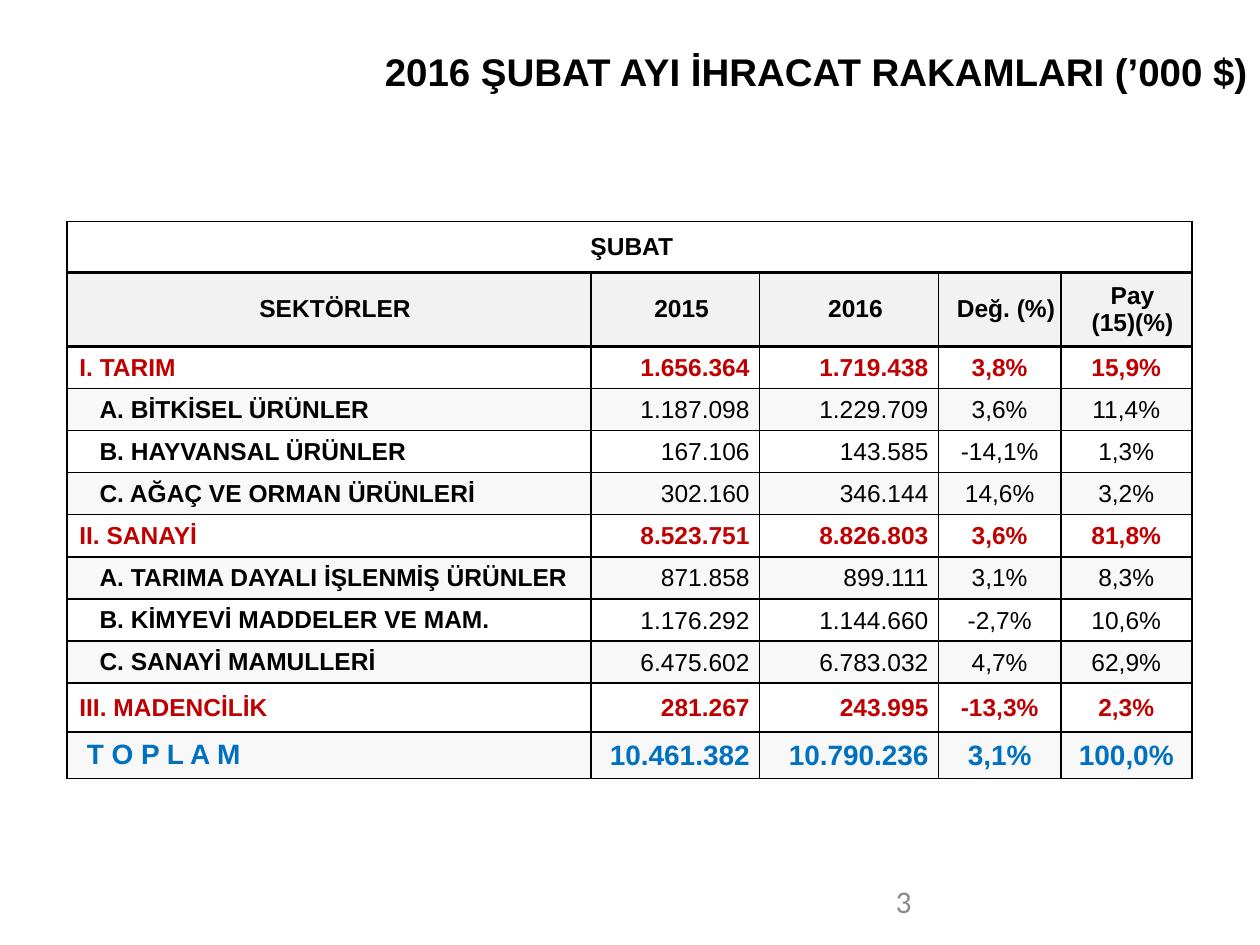
import pptx
import pptx.util
import pptx.dml.color
import pptx.enum.text
import pptx.oxml
import pptx.oxml.ns

Inch = pptx.util.Inches
Align = pptx.enum.text.PP_ALIGN
Mid = pptx.enum.text.MSO_ANCHOR.MIDDLE

theme = {
    "font": "Arial", "page font": "Calibri",
    "title": 22, "page": 18, "body": 14, "total": 16,
    "ink": "000000", "main": "C00000", "sum": "0070C0", "grey": "8C8C8C",
    "head": "F2F2F2", "band": "F8F8F8", "plain": "FFFFFF",
    "thin": 1, "thick": 2,
}
wide, high = 10, 7.5


def write(frame, text, size="body", color="ink", bold=True, font="font",
          align=Align.LEFT):
    for num, line in enumerate(text.split("\n")):
        para = frame.add_paragraph() if num else frame.paragraphs[0]
        para.alignment = align
        run = para.add_run()
        run.text = line
        run.font.name = theme[font]
        run.font.size = pptx.util.Pt(theme[size])
        run.font.bold = bold
        run.font.color.rgb = pptx.dml.color.RGBColor.from_string(theme[color])


def style(cell, fill, top, base, pad):
    """Set fill, insets (left, top, right, bottom) and the four borders."""
    cell.fill.solid()
    cell.fill.fore_color.rgb = pptx.dml.color.RGBColor.from_string(theme[fill])
    cell.vertical_anchor = Mid
    (cell.margin_left, cell.margin_top,
     cell.margin_right, cell.margin_bottom) = map(Inch, pad)
    props = cell._tc.get_or_add_tcPr()
    edges = {"L": "thin", "R": "thin", "T": top, "B": base}
    for spot, (side, width) in enumerate(edges.items()):
        props.insert(spot, pptx.oxml.parse_xml(
            f'<a:ln{side} {pptx.oxml.ns.nsdecls("a")} '
            f'w="{pptx.util.Pt(theme[width])}"><a:solidFill>'
            f'<a:srgbClr val="{theme["ink"]}"/></a:solidFill></a:ln{side}>'))


deck = pptx.Presentation()
deck.slide_width, deck.slide_height = Inch(wide), Inch(high)
slide = deck.slides.add_slide(deck.slide_layouts[6])

page = slide.shapes.add_textbox(Inch(7.01), Inch(6.95), Inch(2.1), Inch(0.4))
page.text_frame.word_wrap = True
page.text_frame.vertical_anchor = Mid
write(page.text_frame, "3", size="page", color="grey", bold=False,
      font="page font")

title = slide.shapes.add_textbox(Inch(1.06), Inch(0.33), Inch(8.94), Inch(0.47))
title.text_frame.word_wrap = True
write(title.text_frame, "2016 ŞUBAT AYI İHRACAT RAKAMLARI (’000 $)",
      size="title", align=Align.RIGHT)

heads = ["SEKTÖRLER", "2015", "2016", "Değ. (%)", "Pay\n(15)(%)"]
# Each row: kind, then the text of its cells
rows = [
    ("main", "I. TARIM", "1.656.364", "1.719.438", "3,8%", "15,9%"),
    ("part", "A. BİTKİSEL ÜRÜNLER", "1.187.098", "1.229.709", "3,6%", "11,4%"),
    ("part", "B. HAYVANSAL ÜRÜNLER", "167.106", "143.585", "-14,1%", "1,3%"),
    ("part", "C. AĞAÇ VE ORMAN ÜRÜNLERİ", "302.160", "346.144", "14,6%", "3,2%"),
    ("main", "II. SANAYİ", "8.523.751", "8.826.803", "3,6%", "81,8%"),
    ("part", "A. TARIMA DAYALI İŞLENMİŞ ÜRÜNLER", "871.858", "899.111", "3,1%", "8,3%"),
    ("part", "B. KİMYEVİ MADDELER VE MAM.", "1.176.292", "1.144.660", "-2,7%", "10,6%"),
    ("part", "C. SANAYİ MAMULLERİ", "6.475.602", "6.783.032", "4,7%", "62,9%"),
    ("main", "III. MADENCİLİK", "281.267", "243.995", "-13,3%", "2,3%"),
    ("sum", "T O P L A M", "10.461.382", "10.790.236", "3,1%", "100,0%"),
]
cols = [4.16, 1.34, 1.42, 0.97, 1.04]
tall = [0.4, 0.59] + [1 / 3] * 8 + [0.39, 0.36]
dent = {"main": 0.1, "part": 0.26, "sum": 0.16}
sides = [Align.LEFT] + [Align.RIGHT] * 2 + [Align.CENTER] * 2

table = slide.shapes.add_table(
    len(tall), len(cols), Inch(0.53), Inch(1.76),
    Inch(sum(cols)), Inch(sum(tall))).table
table.first_row = table.horz_banding = False
for col, width in zip(table.columns, cols):
    col.width = Inch(width)
for row, height in zip(table.rows, tall):
    row.height = Inch(height)

for col, text in enumerate(heads):
    style(table.cell(0, col), "plain", "thin", "thick", (0.14, 0.05, 0.1, 0.05))
    cell = table.cell(1, col)
    style(cell, "head", "thick", "thick", (0.1, 0.05, 0, 0.05))
    write(cell.text_frame, text, align=Align.CENTER)
table.cell(0, 0).merge(table.cell(0, len(cols) - 1))
write(table.cell(0, 0).text_frame, "ŞUBAT", align=Align.CENTER)

for num, (kind, *texts) in enumerate(rows):
    for col, text in enumerate(texts):
        cell = table.cell(num + 2, col)
        if col == 0:
            pad = (dent[kind], 0.05, 0, 0.05)
        else:
            pad = (0.01, 0.01, 0.08 if col < 3 else 0.01, 0)
        style(cell, "band" if num % 2 else "plain",
              "thin" if num else "thick", "thin", pad)
        write(cell.text_frame, text, size="total" if kind == "sum" else "body",
              color="ink" if kind == "part" else kind,
              bold=kind != "part" or col == 0, align=sides[col])

deck.save("out.pptx")
